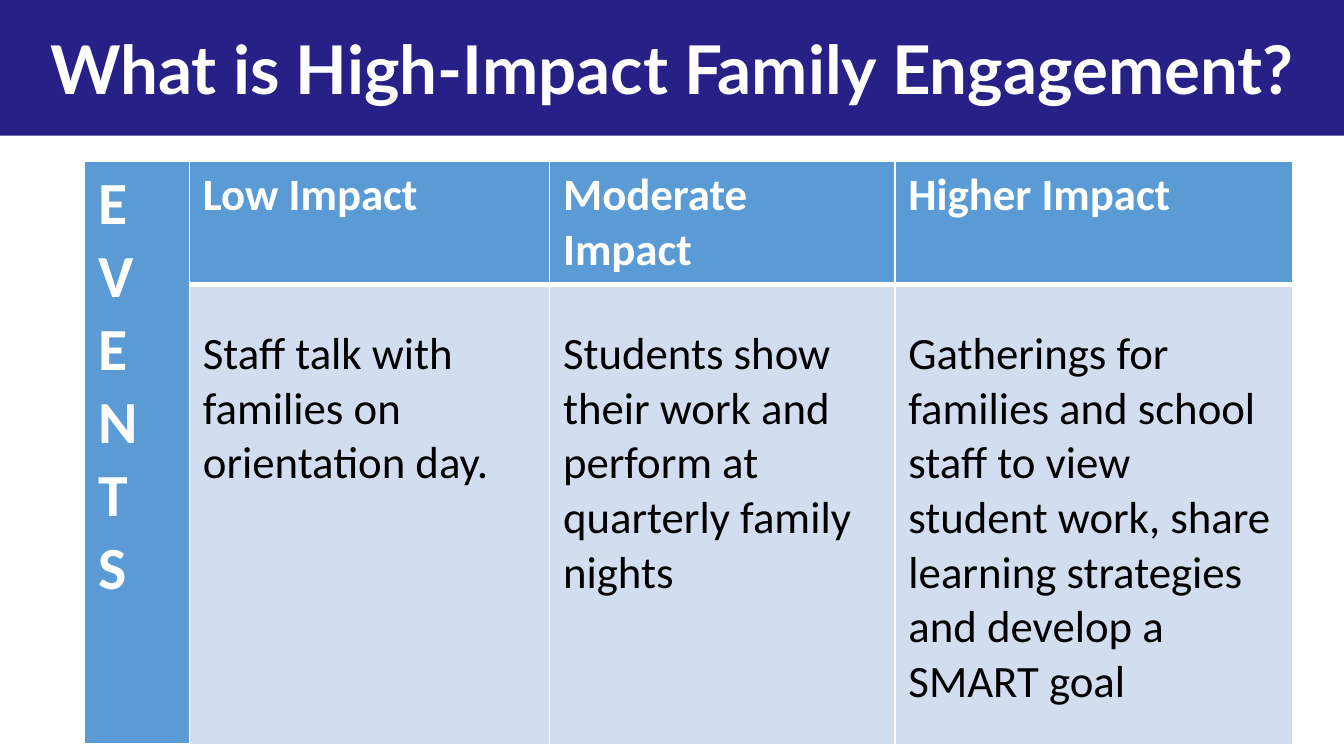
from dataclasses import dataclass

from lxml.etree import SubElement
from pptx import Presentation
from pptx.dml.color import RGBColor
from pptx.enum.shapes import MSO_SHAPE
from pptx.enum.text import MSO_ANCHOR, MSO_AUTO_SIZE, PP_ALIGN
from pptx.oxml.ns import qn
from pptx.util import Inches, Pt


@dataclass(frozen=True)
class Theme:
    navy: str = "262087"
    blue: str = "5B9BD5"
    pale: str = "D2DEEF"
    white: str = "FFFFFF"
    black: str = "000000"
    head: str = "Lato"
    body: str = "Calibri"
    title: int = 36
    side: int = 32
    text: int = 24


THEME = Theme()
WIDE = 10
SIDE = "EVENTS"
COLS = [
    (2.68, "Low Impact", "Staff talk with families on orientation day."),
    (2.57, "Moderate Impact",
     "Students show their work and perform at quarterly family nights"),
    (2.96, "Higher Impact",
     "Gatherings for families and school staff to view student work, "
     "share learning strategies and develop a SMART goal"),
]


def paint(item, color):
    item.fill.solid()
    item.fill.fore_color.rgb = RGBColor.from_string(color)


def style(frame, face, size, color, bold):
    for para in frame.paragraphs:
        for run in para.runs:
            font = run.font
            font.name, font.size, font.bold = face, Pt(size), bold
            font.color.rgb = RGBColor.from_string(color)


def edge(cell, base):
    """Draw white cell borders; base is the width of the lower one in points."""
    props = cell._tc.get_or_add_tcPr()
    for side, width in (("L", 1), ("R", 1), ("T", 1), ("B", base)):
        line = SubElement(props, qn(f"a:ln{side}"), w=str(Pt(width)))
        fill = SubElement(line, qn("a:solidFill"))
        SubElement(fill, qn("a:srgbClr"), val=THEME.white)


def fill_cell(cell, text, size, ink, back, bold, base):
    edge(cell, base)
    paint(cell, back)
    cell.text_frame.text = text
    style(cell.text_frame, THEME.body, size, ink, bold)


def add_title(slide, text):
    title = slide.shapes.title
    title.left, title.top = Inches(0), Inches(0)
    title.width, title.height = Inches(WIDE), Inches(1.01)
    frame = title.text_frame
    frame.text = text
    frame.word_wrap = True
    frame.auto_size = MSO_AUTO_SIZE.NONE
    frame.vertical_anchor = MSO_ANCHOR.MIDDLE
    frame.paragraphs[0].alignment = PP_ALIGN.CENTER
    style(frame, THEME.head, THEME.title, THEME.white, True)


def add_band(slide):
    """Place the coloured band behind the title."""
    band = slide.shapes.add_shape(
        MSO_SHAPE.RECTANGLE, Inches(-0.01), Inches(0), Inches(10.01), Inches(1.01))
    band.shadow.inherit = False
    paint(band, THEME.navy)
    band.line.fill.background()
    slide.shapes.title._element.addprevious(band._element)


def add_grid(slide):
    widths = [0.78] + [col[0] for col in COLS]
    rows = [0.87, 3.43]
    grid = slide.shapes.add_table(
        len(rows), len(widths), Inches(0.63), Inches(1.2),
        Inches(sum(widths)), Inches(sum(rows))).table
    for col, width in zip(grid.columns, widths):
        col.width = Inches(width)
    for row, height in zip(grid.rows, rows):
        row.height = Inches(height)

    grid.cell(0, 0).merge(grid.cell(1, 0))
    fill_cell(grid.cell(0, 0), "\n".join(SIDE), THEME.side,
              THEME.white, THEME.blue, True, 3)
    for num, (_, head, text) in enumerate(COLS, 1):
        fill_cell(grid.cell(0, num), head, THEME.text,
                  THEME.white, THEME.blue, True, 3)
        cell = grid.cell(1, num)
        fill_cell(cell, text, THEME.text, THEME.black, THEME.pale, False, 1)
        cell.margin_top = Inches(0.32)


def main():
    deck = Presentation()
    deck.slide_width = Inches(WIDE)
    deck.slide_height = Inches(WIDE * 9 / 16)
    slide = deck.slides.add_slide(deck.slide_layouts.get_by_name("Title Only"))
    add_title(slide, "What is High-Impact Family Engagement?")
    add_band(slide)
    add_grid(slide)
    deck.save("out.pptx")


if __name__ == "__main__":
    main()
